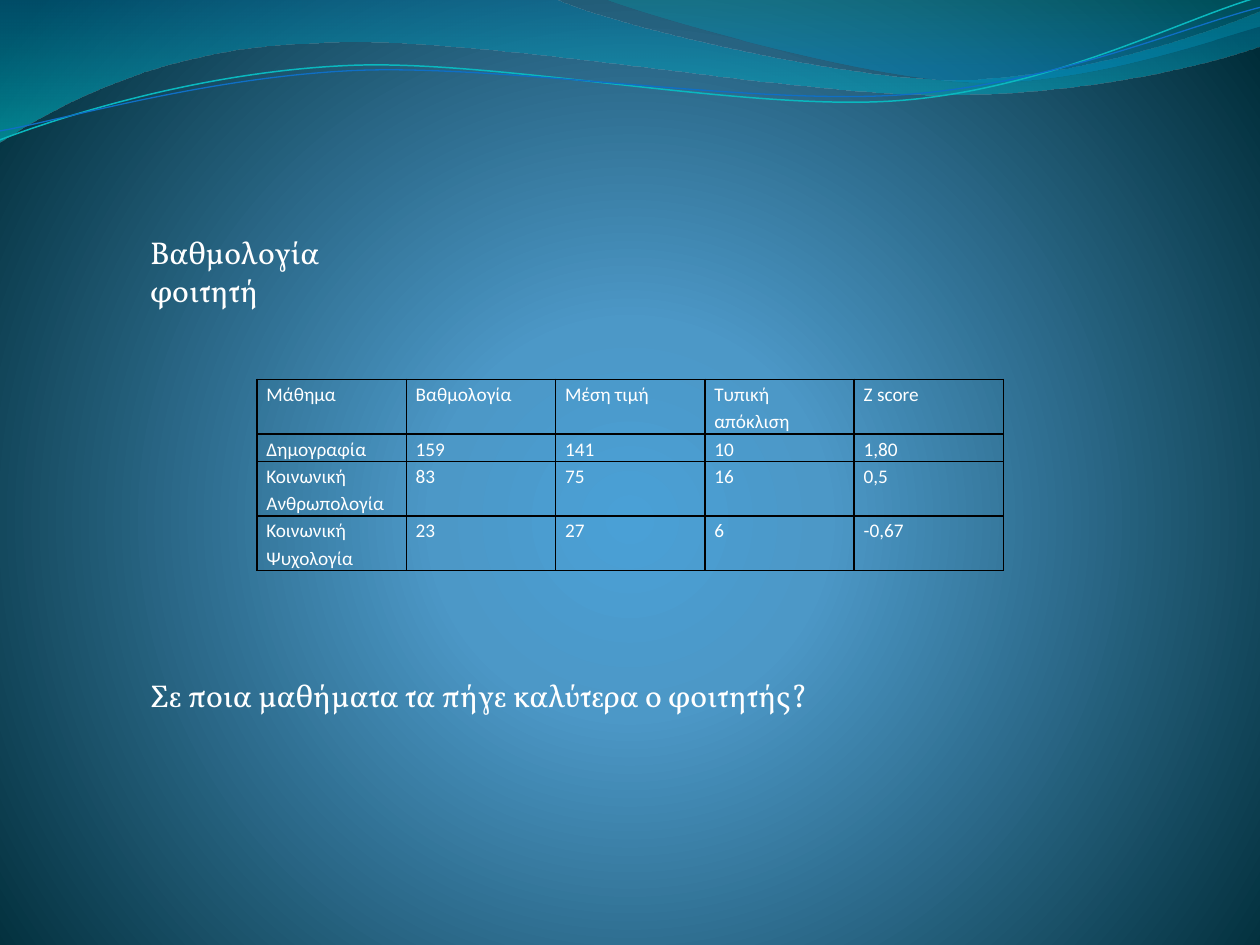
from dataclasses import dataclass

from pptx import Presentation
from pptx.dml.color import RGBColor
from pptx.enum.text import MSO_ANCHOR, MSO_AUTO_SIZE, PP_ALIGN
from pptx.oxml import parse_xml
from pptx.oxml.ns import nsdecls, qn
from pptx.util import Cm, Pt

WHITE = RGBColor(0xFF, 0xFF, 0xFF)
BLACK = RGBColor(0x00, 0x00, 0x00)
SKY = RGBColor(0x4A, 0xA0, 0xD6)
STEEL = RGBColor(0x4C, 0x98, 0xC7)
MIDNIGHT = RGBColor(0x00, 0x2C, 0x38)
OCEAN = RGBColor(0x00, 0x74, 0xA1)
AQUA = RGBColor(0x00, 0xC6, 0xCF)
TEAL = RGBColor(0x00, 0xA1, 0xA9)
AZURE = RGBColor(0x00, 0x8B, 0xBF)
TURQUOISE = RGBColor(0x0A, 0xB8, 0xBF)
ROYAL = RGBColor(0x0F, 0x6F, 0xC6)

HEADING_FONT = "Vollkorn"
TABLE_FONT = "Calibri"
DOWNWARD = '<a:lin ang="5400000" scaled="0"/>'
RADIAL = ('<a:path path="circle"><a:fillToRect l="10000" t="110000" '
          'r="10000" b="100000"/></a:path>')

Point = tuple[float, float]


@dataclass
class Stop:
    position: int
    color: RGBColor
    opacity: int = 100


@dataclass
class Band:
    start: Point
    segments: list[tuple[Point, ...]]
    stops: list[Stop]


@dataclass
class Strand:
    start: Point
    segments: list[tuple[Point, ...]]
    color: RGBColor
    width: float


BANDS = [
    Band((0, 0), [
        ((11.18, -0.03),),
        ((12.09, 0.43), (16.87, 1.6), (19.25, 1.6)),
        ((21.67, 1.6), (24.33, 0.66), (25.4, 0.23)),
        ((25.43, 0.91),),
        ((24.97, 1.12), (22.1, 1.93), (18.95, 1.91)),
        ((15.8, 1.91), (9.7, 0.71), (6.53, 0.86)),
        ((3.28, 0.91), (1.17, 2.11), (-0.03, 2.87)),
    ], [Stop(0, OCEAN, 45), Stop(100, AQUA, 55)]),
    Band((12.17, -0.03), [
        ((12.93, 0.28), (17.32, 1.57), (19.53, 1.65)),
        ((21.74, 1.75), (24.41, 0.81), (25.4, 0.53)),
        ((25.4, 0),),
    ], [Stop(0, TEAL, 30), Stop(80, AZURE, 45)]),
]

STRANDS = [
    Strand((0, 2.82), [
        ((1.22, 2.36), (4.01, 1.45), (7.04, 1.32)),
        ((10.03, 1.19), (15.06, 2.26), (18.11, 2.03)),
        ((21.16, 1.8), (23.83, 0.38), (25.35, -0.05)),
    ], TURQUOISE, 0.85),
    Strand((0, 2.64), [
        ((1.19, 2.44), (4.17, 1.55), (7.19, 1.42)),
        ((10.24, 1.3), (15.16, 2.13), (18.21, 1.91)),
        ((21.23, 1.7), (23.9, 0.53), (25.4, 0.15)),
    ], ROYAL, 0.75),
]

GRADES = [
    ["Μάθημα", "Βαθμολογία", "Μέση τιμή", "Τυπική απόκλιση", "Z score"],
    ["Δημογραφία", "159", "141", "10", "1,80"],
    ["Κοινωνική Ανθρωπολογία", "83", "75", "16", "0,5"],
    ["Κοινωνική Ψυχολογία", "23", "27", "6", "-0,67"],
]
ROW_LINES = [2, 1, 2, 2]
LINE_HEIGHT = 0.55
COLUMN_WIDTH = 3.01


def gradient_stop(stop: Stop) -> str:
    alpha = f'<a:alpha val="{stop.opacity * 1000}"/>' if stop.opacity < 100 else ""
    return (f'<a:gs pos="{stop.position * 1000}">'
            f'<a:srgbClr val="{stop.color}">{alpha}</a:srgbClr></a:gs>')


def set_gradient(owner, fill, stops: list[Stop], direction: str) -> None:
    fill.gradient()
    marks = "".join(map(gradient_stop, stops))
    gradient = parse_xml(f'<a:gradFill {nsdecls("a")} rotWithShape="1">'
                         f'<a:gsLst>{marks}</a:gsLst>{direction}</a:gradFill>')
    default = owner.find(".//" + qn("a:gradFill"))
    default.getparent().replace(default, gradient)


def draw_wave(slide, wave: Band | Strand, close: bool):
    builder = slide.shapes.build_freeform(*map(Cm, wave.start))
    builder.add_line_segments(
        [tuple(map(Cm, segment[-1])) for segment in wave.segments], close=close)
    shape = builder.convert_to_shape()
    shape.shadow.inherit = False
    lines = list(shape._element.iter(qn("a:lnTo")))
    for line, segment in zip(lines, wave.segments):
        if len(segment) == 3:
            points = "".join(
                f'<a:pt x="{Cm(x) - shape.left}" y="{Cm(y) - shape.top}"/>'
                for x, y in segment)
            curve = parse_xml(
                f'<a:cubicBezTo {nsdecls("a")}>{points}</a:cubicBezTo>')
            line.getparent().replace(line, curve)
    return shape


def draw_band(slide, band: Band) -> None:
    shape = draw_wave(slide, band, True)
    shape.line.fill.background()
    set_gradient(shape._element, shape.fill, band.stops, DOWNWARD)


def draw_strand(slide, strand: Strand) -> None:
    shape = draw_wave(slide, strand, False)
    shape.fill.background()
    shape.line.color.rgb = strand.color
    shape.line.width = Pt(strand.width)


def format_font(paragraph, name: str, size: int) -> None:
    for run in paragraph.runs:
        run.font.name = name
        run.font.size = Pt(size)
        run.font.color.rgb = WHITE


def write_heading(shape, text: str) -> None:
    frame = shape.text_frame
    frame.text = text
    frame.word_wrap = True
    frame.auto_size = MSO_AUTO_SIZE.SHAPE_TO_FIT_TEXT
    frame.vertical_anchor = MSO_ANCHOR.TOP
    frame.paragraphs[0].alignment = PP_ALIGN.LEFT
    format_font(frame.paragraphs[0], HEADING_FONT, 18)


def format_cell(cell, text: str) -> None:
    cell.text_frame.text = text
    cell.margin_left = cell.margin_right = Cm(0.19)
    cell.margin_top = cell.margin_bottom = 0
    paragraph = cell.text_frame.paragraphs[0]
    paragraph.line_spacing = 1.15
    format_font(paragraph, TABLE_FONT, 11)
    properties = cell._tc.get_or_add_tcPr()
    for side in ("lnL", "lnR", "lnT", "lnB"):
        properties.append(parse_xml(
            f'<a:{side} {nsdecls("a")} w="{Pt(1)}"><a:solidFill>'
            f'<a:srgbClr val="{BLACK}"/></a:solidFill></a:{side}>'))
    cell.fill.background()


def draw_grades(slide) -> None:
    table = slide.shapes.add_table(
        len(GRADES), len(GRADES[0]), Cm(5.18), Cm(7.65),
        Cm(COLUMN_WIDTH * len(GRADES[0])), Cm(LINE_HEIGHT * sum(ROW_LINES))).table
    table.first_row = table.horz_banding = False
    for column in table.columns:
        column.width = Cm(COLUMN_WIDTH)
    for row, lines, texts in zip(table.rows, ROW_LINES, GRADES):
        row.height = Cm(LINE_HEIGHT * lines)
        for cell, text in zip(row.cells, texts):
            format_cell(cell, text)


def main() -> None:
    presentation = Presentation()
    presentation.slide_width, presentation.slide_height = Cm(25.4), Cm(19.05)
    slide = presentation.slides.add_slide(presentation.slide_layouts[5])
    set_gradient(slide._element, slide.background.fill,
                 [Stop(0, SKY), Stop(25, STEEL), Stop(100, MIDNIGHT)], RADIAL)
    for band in BANDS:
        draw_band(slide, band)
    for strand in STRANDS:
        draw_strand(slide, strand)
    draw_grades(slide)
    heading = slide.shapes.title
    heading.left, heading.top = Cm(2.77), Cm(4.57)
    heading.width, heading.height = Cm(6.1), Cm(1.02)
    write_heading(heading, "Βαθμολογία φοιτητή")
    question = slide.shapes.add_textbox(Cm(2.77), Cm(13.5), Cm(13.77), Cm(1.02))
    write_heading(question, "Σε ποια μαθήματα τα πήγε καλύτερα ο φοιτητής?")
    presentation.save("out.pptx")


if __name__ == "__main__":
    main()
